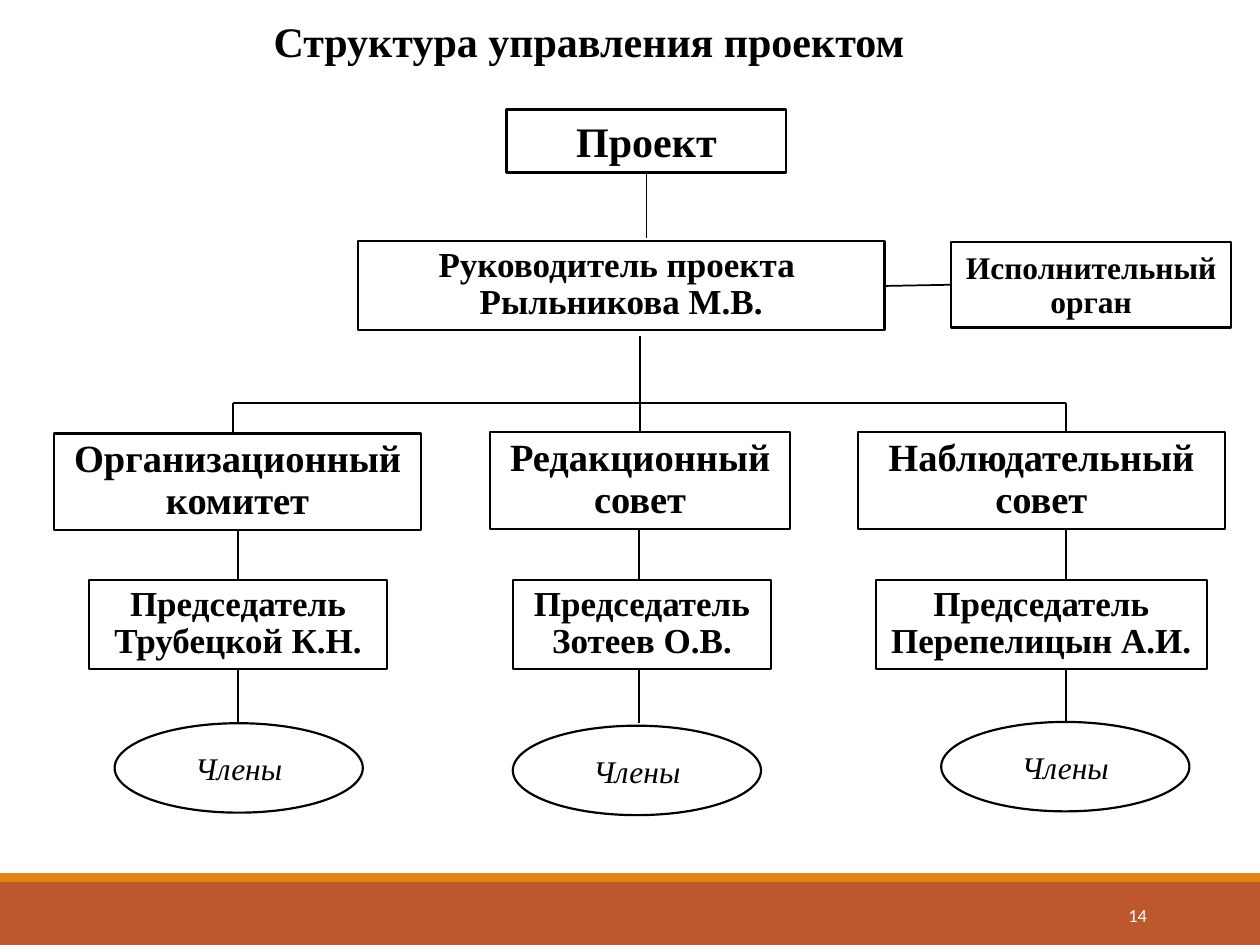
from lxml.etree import SubElement
from pptx import Presentation
from pptx.dml.color import RGBColor
from pptx.enum.shapes import MSO_CONNECTOR, MSO_SHAPE
from pptx.enum.text import MSO_ANCHOR, MSO_AUTO_SIZE, PP_ALIGN
from pptx.oxml.ns import qn
from pptx.util import Inches, Pt


def color(hex_value):
    return RGBColor.from_string(hex_value)


class OrgChart:
    ink = "000000"
    paper = "FFFFFF"
    font = "Times New Roman"

    def __init__(self, slide):
        self.slide = slide

    def label(self, frame, text, size, bold=True, italic=False, font=None, ink=None,
              align=PP_ALIGN.CENTER, anchor=MSO_ANCHOR.TOP, spacing=1.0):
        frame.text = text
        frame.word_wrap = True
        frame.auto_size = MSO_AUTO_SIZE.NONE
        frame.vertical_anchor = anchor
        for paragraph in frame.paragraphs:
            paragraph.alignment = align
            paragraph.line_spacing = spacing
            for run in paragraph.runs:
                run.font.name = font or self.font
                run.font.size = Pt(size)
                run.font.bold = bold
                run.font.italic = italic
                run.font.color.rgb = color(ink or self.ink)

    def title(self, text, left, top, width, height):
        heading = self.slide.shapes.title
        heading.left, heading.top = Inches(left), Inches(top)
        heading.width, heading.height = Inches(width), Inches(height)
        self.label(heading.text_frame, text, 24)

    def shape(self, kind, left, top, width, height, fill):
        shape = self.slide.shapes.add_shape(
            kind, Inches(left), Inches(top), Inches(width), Inches(height))
        shape.shadow.inherit = False
        shape.fill.solid()
        shape.fill.fore_color.rgb = color(fill)
        return shape

    def bar(self, top, height, fill):
        self.shape(MSO_SHAPE.RECTANGLE, 0, top, 10, height, fill).line.fill.background()

    def node(self, text, left, top, width, height, size, kind=MSO_SHAPE.RECTANGLE, **style):
        node = self.shape(kind, left, top, width, height, self.paper)
        node.line.color.rgb = color(self.ink)
        node.line.width = Pt(1.25)
        self.label(node.text_frame, text, size, **style)
        return node

    def members(self, left, top):
        self.node("Члены", left, top, 1.97, 0.71, 18, MSO_SHAPE.OVAL,
                  bold=False, italic=True, anchor=MSO_ANCHOR.MIDDLE)

    def line(self, x1, y1, x2, y2):
        line = self.slide.shapes.add_connector(
            MSO_CONNECTOR.STRAIGHT, Inches(x1), Inches(y1), Inches(x2), Inches(y2))
        line.line.color.rgb = color(self.ink)
        line.line.width = Pt(1)
        SubElement(line._element.spPr, qn("a:effectLst"))

    def page_number(self, text, left, top, width, height):
        number = self.slide.shapes.add_textbox(
            Inches(left), Inches(top), Inches(width), Inches(height))
        self.label(number.text_frame, text, 10.5, bold=False, font="Calibri",
                   ink=self.paper, align=PP_ALIGN.RIGHT, anchor=MSO_ANCHOR.MIDDLE)


def main():
    presentation = Presentation()
    presentation.slide_width = Inches(10)
    presentation.slide_height = Inches(7.5)
    chart = OrgChart(presentation.slides.add_slide(presentation.slide_layouts[5]))

    chart.bar(7, 0.5, "BD582C")
    chart.bar(6.93, 0.07, "E48312")
    chart.page_number("14", 8.12, 7.06, 1.08, 0.4)
    chart.title("Структура управления проектом ", 1.54, 0.07, 6.35, 0.5)

    chart.node("Проект", 4.02, 0.87, 2.22, 0.5, 24)
    chart.node("Руководитель проекта \nРыльникова М.В.", 2.84, 1.91, 4.18, 0.71, 20, spacing=0.9)
    executive = chart.node("Исполнительный \nорган", 7.55, 1.92, 2.22, 0.68, 18)
    executive.text_frame.paragraphs[1].line_spacing = 0.9

    chart.line(5.13, 1.37, 5.13, 1.89)
    chart.line(7.01, 2.27, 7.55, 2.26)
    chart.line(5.08, 2.67, 5.08, 3.2)
    chart.line(1.85, 3.2, 8.46, 3.2)

    branches = [
        ("Организационный комитет", 0.43, 3.44, 2.91, "Трубецкой К.Н.", 0.71, 2.36,
         0.91, 5.74, 1.85, 1.89),
        ("Редакционный совет", 3.89, 3.43, 2.38, "Зотеев О.В.", 4.07, 2.05,
         4.07, 5.76, 5.08, 5.07),
        ("Наблюдательный совет", 6.81, 3.43, 2.91, "Перепелицын А.И.", 6.95, 2.63,
         7.47, 5.73, 8.46, 8.46),
    ]
    for (body, body_left, body_top, body_width, chair, chair_left, chair_width,
         members_left, members_top, branch_x, stem_x) in branches:
        chart.node(body, body_left, body_top, body_width, 0.77, 22, spacing=0.9)
        chart.node(f"Председатель\n{chair}", chair_left, 4.6, chair_width, 0.71, 20, spacing=0.9)
        chart.members(members_left, members_top)
        chart.line(branch_x, 3.2, branch_x, 3.43)
        chart.line(stem_x, 4.2, stem_x, 4.6)
        chart.line(stem_x, 5.31, stem_x, 5.74)

    presentation.save("out.pptx")


if __name__ == "__main__":
    main()
